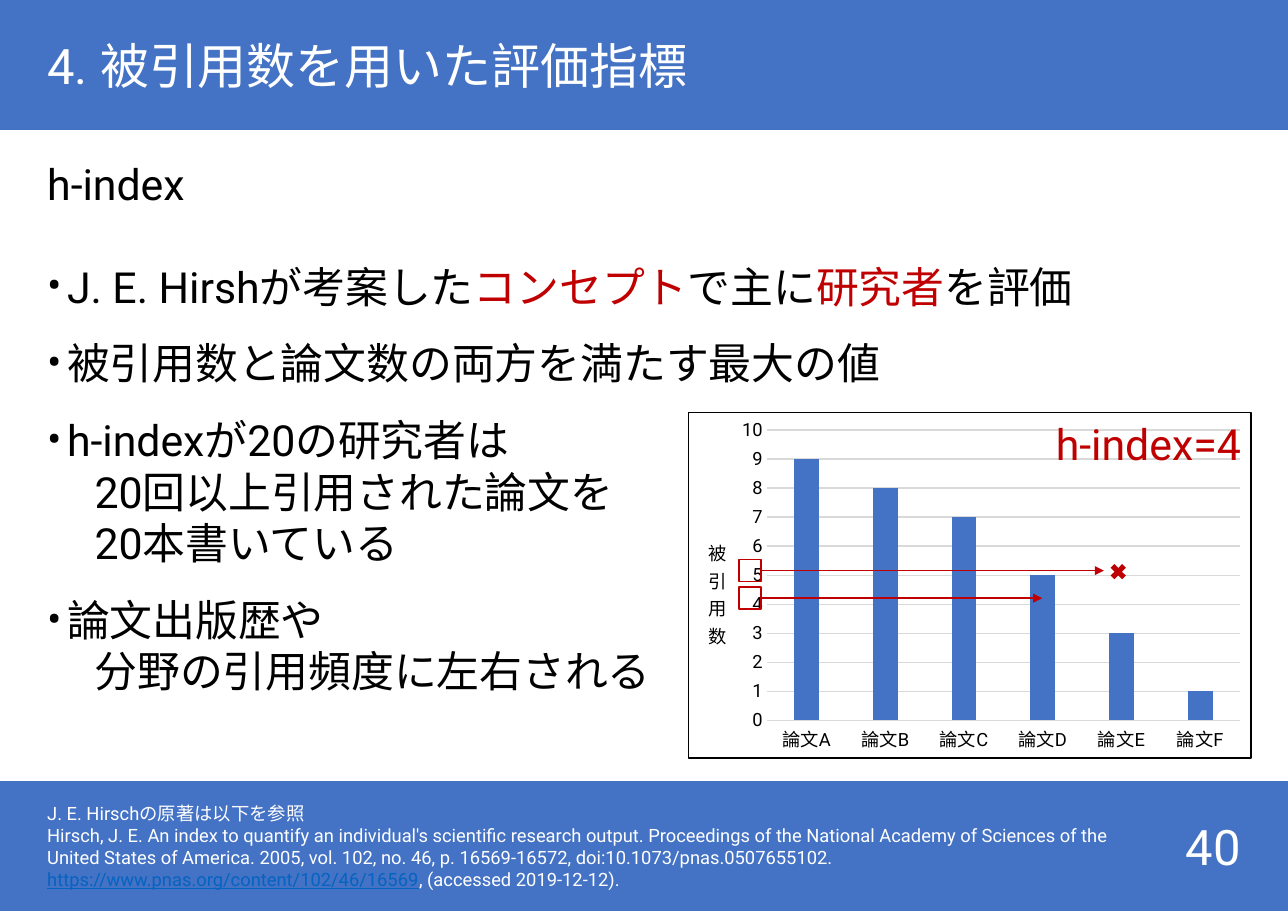
from lxml.etree import SubElement
from pptx import Presentation
from pptx.chart.data import CategoryChartData
from pptx.dml.color import RGBColor
from pptx.enum.chart import XL_CHART_TYPE, XL_TICK_MARK
from pptx.enum.shapes import MSO_CONNECTOR, MSO_SHAPE
from pptx.enum.text import MSO_ANCHOR, PP_ALIGN
from pptx.oxml import parse_xml
from pptx.oxml.ns import nsdecls, qn
from pptx.util import Inches, Pt

WIDE, HIGH, BAND = 11.69, 8.27, 1.18
EDGE = 0.33
COLORS = {"blue": "4472C4", "red": "C00000", "black": "000000",
          "white": "FFFFFF", "grid": "D9D9D9", "link": "0563C1"}
HEAD = {"size": Pt(32), "name": "Roboto", "bold": False}
TEXT = {"size": Pt(28), "name": "Roboto"}
NOTE = {"size": Pt(12), "name": "Roboto"}

# Each line: kind, space before in points, runs of (text, color)
BODY = [
    ("plain", 0, [("h-index", "black")]),
    ("bullet", 33.6, [("J. E. Hirshが考案した", "black"), ("コンセプト", "red"),
                      ("で主に", "black"), ("研究者", "red"), ("を評価", "black")]),
    ("bullet", 16.7, [("被引用数と論文数の両方を満たす最大の値", "black")]),
    ("bullet", 16.7, [("h-indexが20の研究者は", "black")]),
    ("inner", 0, [("20回以上引用された論文を", "black")]),
    ("inner", 0, [("20本書いている", "black")]),
    ("bullet", 16.7, [("論文出版歴や", "black")]),
    ("inner", 0, [("分野の引用頻度に左右される", "black")]),
]
SOURCE = [
    ("plain", 0, [("J. E. Hirschの原著は以下を参照", "white")]),
    ("plain", 0, [
        ("Hirsch, J. E. An index to quantify an individual's scientific research "
         "output. Proceedings of the National Academy of Sciences of the United "
         "States of America. 2005, vol. 102, no. 46, p. 16569-16572, "
         "doi:10.1073/pnas.0507655102. ", "white"),
        ("https://www.pnas.org/content/102/46/16569", "link"),
        (", (accessed 2019-12-12).", "white")]),
]
CITED = {"論文A": 9, "論文B": 8, "論文C": 7, "論文D": 5, "論文E": 3, "論文F": 1}


def rgb(name):
    return RGBColor.from_string(COLORS[name])


def style(font, look, color):
    for key, value in look.items():
        setattr(font, key, value)
    font.color.rgb = rgb(color)


def indent(para, kind):
    """Set a hanging bullet or the deeper margin of a continued line."""
    props = para._p.get_or_add_pPr()
    if kind == "bullet":
        props.set("marL", str(Inches(0.18)))
        props.set("indent", str(-Inches(0.18)))
        SubElement(props, qn("a:buFont"), typeface="Roboto")
        SubElement(props, qn("a:buChar"), char="•")
    elif kind == "inner":
        props.set("marL", str(Inches(0.43)))
        props.set("indent", "0")


def fill_text(frame, lines, look, pitch=None, align=PP_ALIGN.LEFT,
              anchor=MSO_ANCHOR.MIDDLE):
    frame.word_wrap = True
    frame.vertical_anchor = anchor
    for i, (kind, gap, runs) in enumerate(lines):
        para = frame.add_paragraph() if i else frame.paragraphs[0]
        indent(para, kind)
        para.alignment = align
        if pitch:
            para.line_spacing = Pt(pitch)
        if gap:
            para.space_before = Pt(gap)
        for text, color in runs:
            run = para.add_run()
            run.text = text
            style(run.font, look, color)
            if color == "link":
                run.font.underline = True


def add_text(slide, box, lines, look, **rest):
    frame = slide.shapes.add_textbox(*map(Inches, box)).text_frame
    fill_text(frame, lines, look, **rest)


def add_form(slide, kind, box, fill=None, line=None):
    form = slide.shapes.add_shape(kind, *map(Inches, box))
    form.shadow.inherit = False
    if fill:
        form.fill.solid()
        form.fill.fore_color.rgb = rgb(fill)
    else:
        form.fill.background()
    if line:
        form.line.color.rgb = rgb(line)
        form.line.width = Pt(1)
    else:
        form.line.fill.background()
    return form


def add_arrow(slide, start, end):
    """Draw a red arrow from the right side of a shape to a point."""
    line = slide.shapes.add_connector(
        MSO_CONNECTOR.STRAIGHT, start.left + start.width,
        start.top + start.height // 2, *map(Inches, end))
    line.begin_connect(start, 3)
    line.line.color.rgb = rgb("red")
    line.line.width = Pt(1)
    SubElement(line.line._get_or_add_ln(), qn("a:tailEnd"), type="triangle")
    SubElement(line.element.spPr, qn("a:effectLst"))


def layout(x, y, size=""):
    return parse_xml(
        f'<c:layout {nsdecls("c")}><c:manualLayout>{size and "<c:layoutTarget val=" + chr(34) + "inner" + chr(34) + "/>"}'
        f'<c:xMode val="edge"/><c:yMode val="edge"/><c:x val="{x}"/><c:y val="{y}"/>'
        f'{size}</c:manualLayout></c:layout>')


def frame_chart(chart):
    """Give the chart a black border and place its plot."""
    root = chart.element.find(qn("c:chart"))
    root.addnext(parse_xml(
        f'<c:spPr {nsdecls("c", "a")}><a:noFill/><a:ln w="12700"><a:solidFill>'
        f'<a:srgbClr val="{COLORS["black"]}"/></a:solidFill></a:ln></c:spPr>'))
    plot = root.find(qn("c:plotArea"))
    for old in plot.findall(qn("c:layout")):
        plot.remove(old)
    plot.insert(0, layout(0.14, 0.05, '<c:w val="0.84"/><c:h val="0.84"/>'))


def name_axis(axis, text):
    """Title the axis with upright, stacked letters."""
    title = axis.axis_title
    frame = title.text_frame
    frame.text = text
    style(frame.paragraphs[0].runs[0].font, {**NOTE, "bold": False}, "black")
    body = frame._txBody.find(qn("a:bodyPr"))
    body.set("rot", "0")
    body.set("vert", "wordArtVertRtl")
    for old in title.element.findall(qn("c:layout")):
        title.element.remove(old)
    title.element.find(qn("c:tx")).addnext(layout(0.03, 0.35))


def add_bars(slide, box):
    data = CategoryChartData()
    data.categories = list(CITED)
    data.add_series("Series 1", list(CITED.values()))
    chart = slide.shapes.add_chart(
        XL_CHART_TYPE.COLUMN_CLUSTERED, *map(Inches, box), data).chart
    chart.has_legend = chart.has_title = False
    style(chart.font, {"size": Pt(10), "name": "Roboto"}, "black")
    plot = chart.plots[0]
    plot.gap_width, plot.overlap, plot.vary_by_categories = 219, -27, False
    bars = plot.series[0].format.fill
    bars.solid()
    bars.fore_color.rgb = rgb("blue")
    cats, vals = chart.category_axis, chart.value_axis
    for axis in (cats, vals):
        axis.major_tick_mark = axis.minor_tick_mark = XL_TICK_MARK.NONE
        style(axis.tick_labels.font, NOTE, "black")
    vals.minimum_scale, vals.maximum_scale, vals.major_unit = 0, 10, 1
    vals.format.line.fill.background()
    for line in (cats.format.line, vals.major_gridlines.format.line):
        line.color.rgb = rgb("grid")
        line.width = Pt(0.75)
    name_axis(vals, "被引用数")
    frame_chart(chart)


def add_graph(slide, box):
    """Place the chart with the marks that show how the index is read."""
    x, y, wide, _ = box
    add_bars(slide, box)
    for i, reach in enumerate((3.78, 3.22)):
        top = y + 1.34 + 0.25 * i
        mark = add_form(slide, MSO_SHAPE.RECTANGLE, (x + 0.47, top, 0.2, 0.2),
                        line="red")
        add_arrow(slide, mark, (x + reach, top + 0.1))
    add_text(slide, (x + wide - 2.15, y, 2.15, 0.57),
             [("plain", 0, [("h-index=4", "red")])], TEXT,
             align=PP_ALIGN.RIGHT, anchor=MSO_ANCHOR.TOP)
    add_form(slide, MSO_SHAPE.MATH_MULTIPLY, (x + 3.81, y + 1.35, 0.2, 0.2),
             fill="red")


def add_head(slide, box):
    x, y, wide, high = box
    add_form(slide, MSO_SHAPE.RECTANGLE, box, fill="blue")
    title = slide.shapes.title
    slide.shapes.element.append(title.element)
    place = {"left": x + EDGE, "top": y, "width": wide - 2 * EDGE, "height": high}
    for key, value in place.items():
        setattr(title, key, Inches(value))
    fill_text(title.text_frame,
              [("plain", 0, [("4. 被引用数を用いた評価指標", "white")])], HEAD)


def add_foot(slide, box):
    x, y, wide, high = box
    add_form(slide, MSO_SHAPE.RECTANGLE, box, fill="blue")
    add_text(slide, (x + EDGE, y, 10.18, high), SOURCE, NOTE, pitch=14.4)
    add_text(slide, (x + wide - EDGE - 2.36, y, 2.36, high),
             [("plain", 0, [("40", "white")])], HEAD, align=PP_ALIGN.RIGHT)


def main():
    deck = Presentation()
    deck.slide_width, deck.slide_height = Inches(WIDE), Inches(HIGH)
    slide = deck.slides.add_slide(deck.slide_layouts[5])
    add_head(slide, (0, 0, WIDE, BAND))
    add_text(slide, (EDGE, 1.38, 11.02, 5.51), BODY, TEXT, pitch=33.6,
             anchor=MSO_ANCHOR.TOP)
    add_graph(slide, (6.24, 3.74, 5.12, 3.15))
    add_foot(slide, (0, HIGH - BAND, WIDE, BAND))
    deck.save("out.pptx")


if __name__ == "__main__":
    main()
